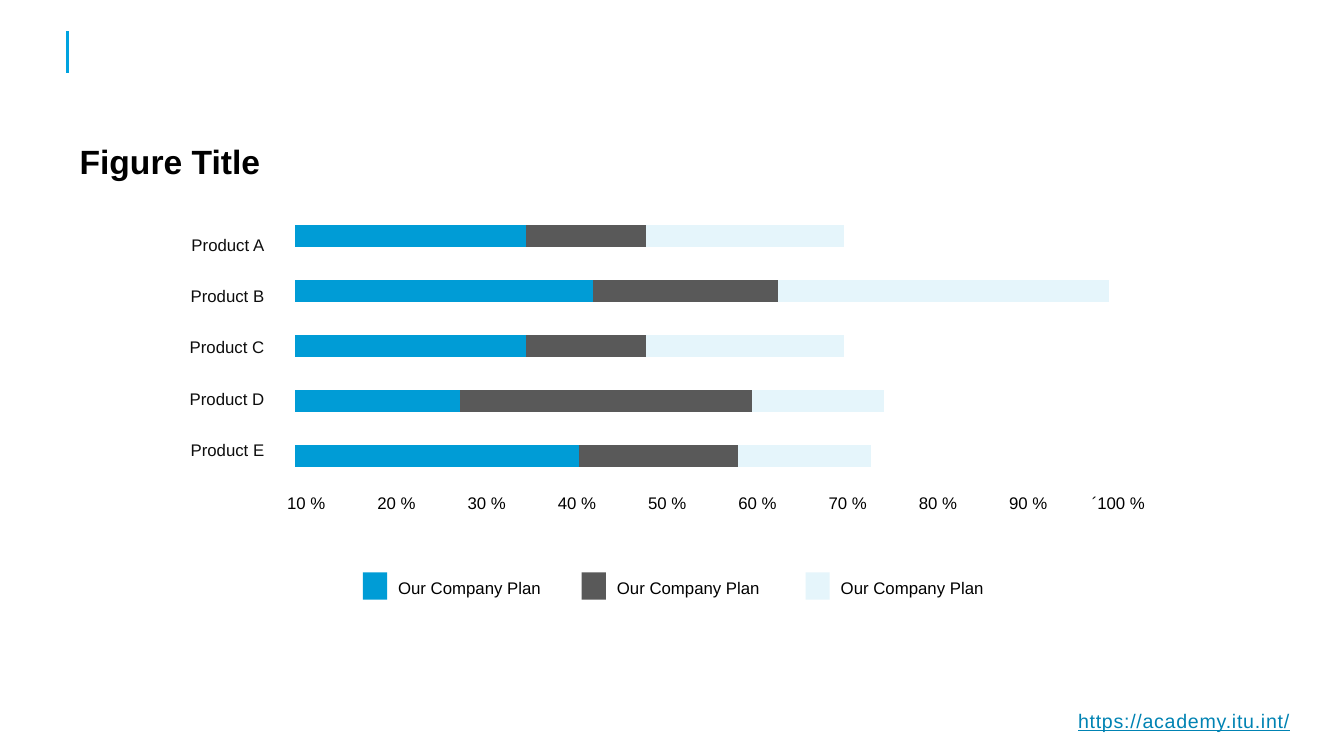
"""Build the Figure Title slide with a stacked bar chart, its labels and a legend."""
from lxml import etree
from pptx import Presentation
from pptx.chart.data import CategoryChartData
from pptx.dml.color import RGBColor
from pptx.enum.chart import XL_CHART_TYPE
from pptx.enum.shapes import MSO_CONNECTOR, MSO_SHAPE
from pptx.enum.text import MSO_ANCHOR, PP_ALIGN
from pptx.oxml import parse_xml
from pptx.oxml.ns import nsdecls, qn
from pptx.util import Inches, Pt

FONT = "Arial"
TITLE = "Figure Title"
LINK = "https://academy.itu.int/"
PRODUCTS = ["Product A", "Product B", "Product C", "Product D", "Product E"]
TICKS = [f"{n} %" for n in range(10, 100, 10)]
LAST_TICK = "´100 %"
CATEGORIES = ["1", "2", "3", "4", "5"]
SERIES = [
    ("Series 1", (86, 50, 70, 90, 70), "009CD6"),
    ("Series 2", (48, 88, 36, 56, 36), "595959"),
    ("Series 3", (40, 40, 60, 100, 60), "E5F5FB"),
]
LEGEND = [
    ("Our Company Plan", 3.6, "009CD6"),
    ("Our Company Plan", 5.77, "595959"),
    ("Our Company Plan", 7.99, "E5F5FB"),
]
PLOT_AREA = {"x": 0.02, "y": 0.02, "w": 0.96, "h": 0.96}


def rgb(color):
    return RGBColor.from_string(color)


def box(*lengths):
    return [Inches(n) for n in lengths]


def style(p, size, color, align=PP_ALIGN.LEFT):
    p.alignment = align
    p.font.name, p.font.size = FONT, Pt(size)
    p.font.color.rgb = rgb(color)


def add_text(s, text, at, size=12, color="000000", align=PP_ALIGN.LEFT):
    tf = s.shapes.add_textbox(*box(*at)).text_frame
    tf.word_wrap = True
    p = tf.paragraphs[0]
    p.text = text
    style(p, size, color, align)
    return p


def add_title(s):
    sp = s.shapes.title
    sp.left, sp.top, sp.width, sp.height = box(0.69, 1.39, 9.91, 0.53)
    tf = sp.text_frame
    tf.text = TITLE
    tf.vertical_anchor = MSO_ANCHOR.TOP
    p = tf.paragraphs[0]
    p.line_spacing = 0.9
    style(p, 24, "000000")
    p.font.bold = True


def add_accent(s):
    line = s.shapes.add_connector(MSO_CONNECTOR.STRAIGHT, *box(0.67, 0.31, 0.67, 0.72))
    line.line.color.rgb = rgb("00A3E0")
    line.line.width = Pt(2)
    etree.SubElement(line._element.spPr, qn("a:effectLst"))


def add_link(s):
    p = add_text(s, LINK, (10.16, 6.98, 2.73, 0.34), 14, "0083B3", PP_ALIGN.RIGHT)
    r = p.runs[0]
    r.font.underline = True
    r._r.get_or_add_rPr().set("spc", "50")


def add_bars(s):
    data = CategoryChartData()
    data.categories = CATEGORIES
    for name, values, _ in SERIES:
        data.add_series(name, values)
    at = box(2.73, 2.01, 9.58, 2.85)
    chart = s.shapes.add_chart(XL_CHART_TYPE.BAR_STACKED, *at, data).chart
    chart.has_legend = chart.has_title = False
    chart.font.name, chart.font.size = FONT, Pt(10)
    chart.font.color.rgb = rgb("000000")
    value_axis = chart.value_axis
    value_axis.minimum_scale, value_axis.maximum_scale = 0, 280
    value_axis.has_major_gridlines = False
    value_axis.visible = chart.category_axis.visible = False
    plot = chart.plots[0]
    plot.gap_width, plot.overlap = 150, 100
    plot.vary_by_categories = False
    for series, (_, _, color) in zip(plot.series, SERIES):
        series.format.fill.solid()
        series.format.fill.fore_color.rgb = rgb(color)
    modes = '<c:layoutTarget val="inner"/><c:xMode val="edge"/><c:yMode val="edge"/>'
    sizes = "".join(f'<c:{k} val="{v}"/>' for k, v in PLOT_AREA.items())
    layout = parse_xml(
        f'<c:layout {nsdecls("c")}><c:manualLayout>{modes}{sizes}</c:manualLayout></c:layout>'
    )
    area = chart._chartSpace.chart.plotArea
    for old in area.findall(qn("c:layout")):
        area.remove(old)
    area.insert(0, layout)


def add_labels(s):
    for i, tick in enumerate(TICKS):
        add_text(s, tick, (2.75 + 0.895 * i, 4.84, 0.77, 0.3))
    add_text(s, LAST_TICK, (10.73, 4.84, 0.89, 0.3))
    for i, product in enumerate(PRODUCTS):
        at = (1.3, 2.28 + 0.508 * i, 1.42, 0.3)
        add_text(s, product, at, color="0D0D0D", align=PP_ALIGN.RIGHT)


def add_legend(s):
    for text, left, color in LEGEND:
        key = s.shapes.add_shape(MSO_SHAPE.RECTANGLE, *box(left, 5.68, 0.24, 0.27))
        key.shadow.inherit = False
        key.fill.solid()
        key.fill.fore_color.rgb = rgb(color)
        key.line.fill.background()
        add_text(s, text, (left + 0.25, 5.68, 1.71, 0.3))


def main():
    prs = Presentation()
    prs.slide_width, prs.slide_height = box(13.33, 7.5)
    s = prs.slides.add_slide(prs.slide_layouts[5])
    add_title(s)
    add_accent(s)
    add_link(s)
    add_bars(s)
    add_labels(s)
    add_legend(s)
    prs.save("out.pptx")


if __name__ == "__main__":
    main()
